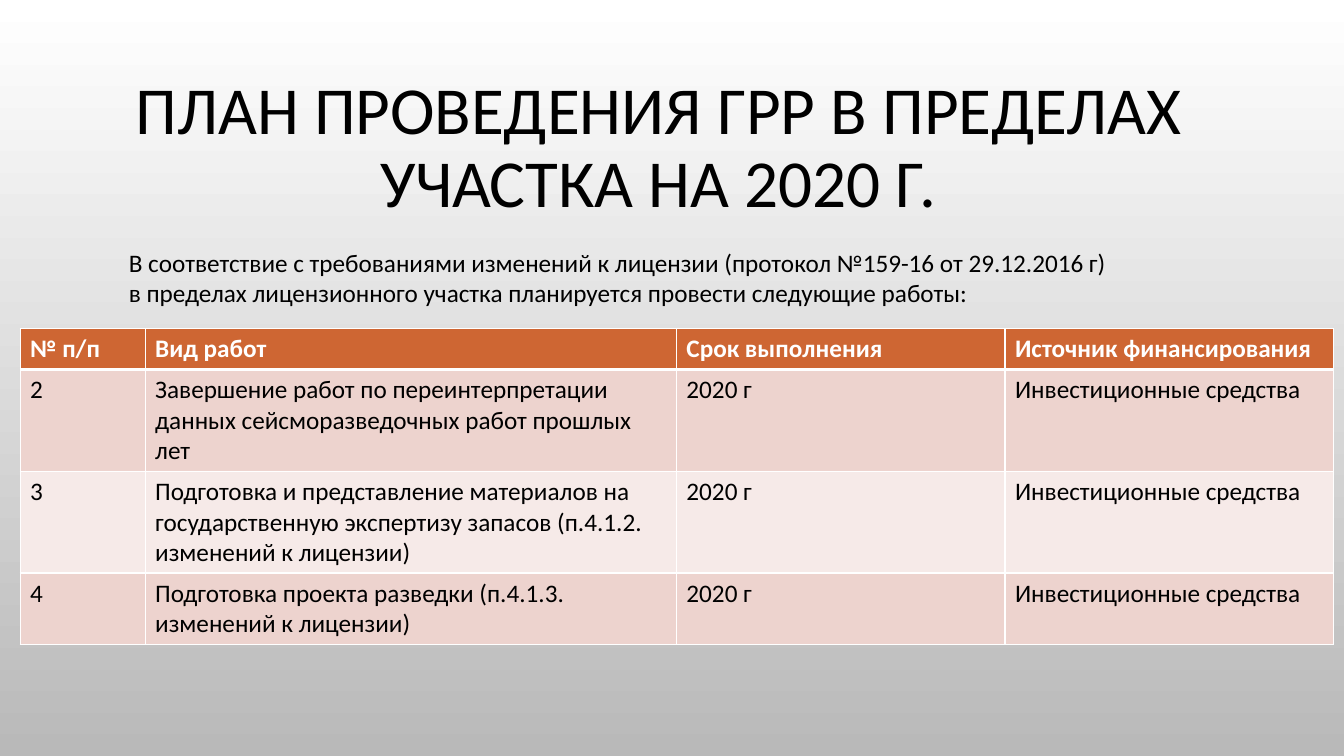
from dataclasses import dataclass

from lxml.etree import SubElement
from pptx import Presentation
from pptx.dml.color import RGBColor
from pptx.enum.text import MSO_ANCHOR, PP_ALIGN
from pptx.oxml.ns import qn
from pptx.util import Inches, Pt


@dataclass(frozen=True)
class Theme:
    font: str = "Calibri"
    title_size: int = 48
    body_size: int = 18
    text: str = "000000"
    white: str = "FFFFFF"
    bg_bottom: str = "B9B9B9"
    header: str = "CE6633"
    bands: tuple = ("EDD3CE", "F6EAE8")
    thin: int = 1
    thick: int = 3


THEME = Theme()
WIDTH, HEIGHT = Inches(13.33), Inches(7.5)

TITLE = "ПЛАН ПРОВЕДЕНИЯ ГРР В ПРЕДЕЛАХ УЧАСТКА НА 2020 Г."
INTRO = (
    "В соответствие с требованиями изменений к лицензии (протокол №159-16 от 29.12.2016 г)",
    "в пределах лицензионного участка планируется провести следующие работы:",
)
HEADINGS = ("№ п/п", "Вид работ", "Срок выполнения", "Источник финансирования")
WORKS = (
    "Завершение работ по переинтерпретации данных сейсморазведочных работ прошлых лет",
    "Подготовка и представление материалов на государственную экспертизу запасов "
    "(п.4.1.2. изменений к лицензии)",
    "Подготовка проекта разведки (п.4.1.3. изменений к лицензии)",
)
DEADLINE, FUNDING = "2020 г", "Инвестиционные средства"

# Table grid in percent of the slide's width and height
COLUMNS = (9.3, 39.53, 24.45, 24.45)
ROWS = (5.4, 13.47, 13.47, 9.4)


def across(percent):
    return int(WIDTH * percent / 100)


def down(percent):
    return int(HEIGHT * percent / 100)


def place(left, top, width, height):
    return across(left), down(top), across(width), down(height)


def write(p, text, size=THEME.body_size, color=THEME.text, bold=False,
          align=PP_ALIGN.LEFT, spacing=None):
    p.alignment = align
    if spacing:
        p.line_spacing = spacing
    r = p.add_run()
    r.text = text
    r.font.name = THEME.font
    r.font.size = Pt(size)
    r.font.bold = bold
    r.font.color.rgb = RGBColor.from_string(color)


def add_text(slide, box, lines, anchor=MSO_ANCHOR.TOP, wrap=True, **fmt):
    tf = slide.shapes.add_textbox(*box).text_frame
    tf.word_wrap = wrap
    tf.vertical_anchor = anchor
    for i, line in enumerate(lines):
        p = tf.add_paragraph() if i else tf.paragraphs[0]
        write(p, line, **fmt)


def set_borders(cell, top, bottom):
    tcPr = cell._tc.get_or_add_tcPr()
    widths = {"L": THEME.thin, "R": THEME.thin, "T": top, "B": bottom}
    for side, width in widths.items():
        ln = SubElement(tcPr, qn(f"a:ln{side}"), w=str(Pt(width)))
        fill = SubElement(ln, qn("a:solidFill"))
        SubElement(fill, qn("a:srgbClr"), val=THEME.white)


def add_work_table(slide, left, top, rows):
    box = place(left, top, sum(COLUMNS), sum(ROWS))
    table = slide.shapes.add_table(len(ROWS), len(COLUMNS), *box).table
    for column, width in zip(table.columns, COLUMNS):
        column.width = across(width)
    for i, (row, height, texts) in enumerate(zip(table.rows, ROWS, rows)):
        row.height = down(height)
        is_header = i == 0
        fill = THEME.header if is_header else THEME.bands[(i - 1) % 2]
        color = THEME.white if is_header else THEME.text
        for cell, text in zip(row.cells, texts):
            # The heavy rule is shared by the header and the row below it
            set_borders(cell,
                        top=THEME.thick if i == 1 else THEME.thin,
                        bottom=THEME.thick if is_header else THEME.thin)
            cell.fill.solid()
            cell.fill.fore_color.rgb = RGBColor.from_string(fill)
            write(cell.text_frame.paragraphs[0], text, color=color, bold=is_header)


def set_background(slide):
    fill = slide.background.fill
    fill.gradient()
    fill.gradient_angle = 270
    for stop, color in zip(fill.gradient_stops, (THEME.white, THEME.bg_bottom)):
        stop.color.rgb = RGBColor.from_string(color)


def main():
    prs = Presentation()
    prs.slide_width, prs.slide_height = WIDTH, HEIGHT
    slide = prs.slides.add_slide(prs.slide_layouts[6])
    set_background(slide)

    # Title and introduction
    add_text(slide, place(7.5, 6.67, 83.05, 23.33), [TITLE],
             anchor=MSO_ANCHOR.BOTTOM, size=THEME.title_size,
             align=PP_ALIGN.CENTER, spacing=0.9)
    add_text(slide, place(8.85, 32, 77.55, 9.47), INTRO, wrap=False)

    # Planned works, numbered from 2
    works = [(str(n), work, DEADLINE, FUNDING) for n, work in enumerate(WORKS, 2)]
    add_work_table(slide, 1.5, 43.47, [HEADINGS, *works])

    prs.save("out.pptx")


if __name__ == "__main__":
    main()
